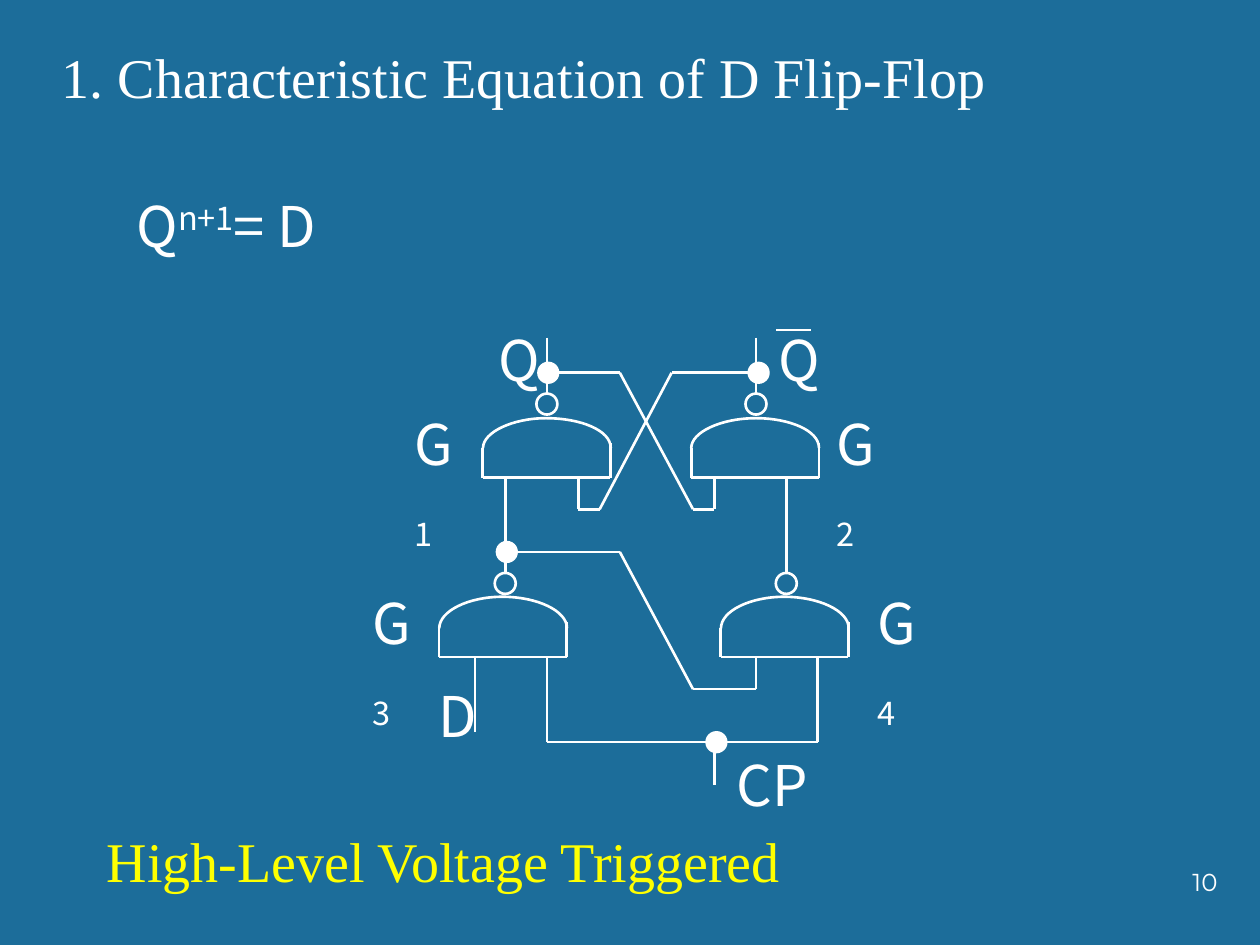
from itertools import pairwise
from lxml import etree
from pptx import Presentation
from pptx import util as u
from pptx.dml import color
from pptx.enum import shapes, text
from pptx.oxml import ns

Pt = u.Pt
COLORS = {"background": "1C6D9A", "ink": "FFFFFF", "accent": "FFFF00"}
RGB = {name: color.RGBColor.from_string(value) for name, value in COLORS.items()}
SANS, SERIF = "Noto Sans CJK SC", "Times New Roman"

deck = Presentation()
deck.slide_width, deck.slide_height = Pt(720), Pt(540)
slide = deck.slides.add_slide(deck.slide_layouts[6])
slide.background.fill.solid()
slide.background.fill.fore_color.rgb = RGB["background"]


def write(words, left, top, width, height=46, *, font=SANS, size=32, ink="ink",
          align=text.PP_ALIGN.LEFT):
    """Add a label; each entry of words is (string, baseline shift in percent)."""
    box = slide.shapes.add_textbox(Pt(left), Pt(top), Pt(width), Pt(height))
    box.text_frame.word_wrap = True
    line = box.text_frame.paragraphs[0]
    line.alignment = align
    for string, shift in words:
        run = line.add_run()
        run.text = string
        run.font.size, run.font.name = Pt(size), font
        run.font.color.rgb = RGB[ink]
        properties = run.font._element
        if shift:
            properties.set("baseline", str(shift * 1000))
        etree.SubElement(properties, ns.qn("a:ea")).set("typeface", font)


def wire(*points):
    """Join the points with straight segments."""
    for (x1, y1), (x2, y2) in pairwise(points):
        segment = slide.shapes.add_connector(
            shapes.MSO_CONNECTOR.STRAIGHT, Pt(x1), Pt(y1), Pt(x2), Pt(y2))
        segment.line.color.rgb = RGB["ink"]
        segment.line.width = Pt(1.5)
        etree.SubElement(segment._element.spPr, ns.qn("a:effectLst"))


# Heading, equation and closing remark
write([(" 1. Characteristic Equation of D Flip-Flop", 0)], 20.2, 20.9, 683.3, font=SERIF)
write([("Q", 0), ("n+1", 30), ("= D", 0)], 70.9, 105.8, 386)
write([("High-Level Voltage Triggered", 0)], 54, 468.7, 430.6, font=SERIF, ink="accent")

# Levels and columns of the circuit
output_y, cross_y, upper_base, feedback_y = 193, 213, 273, 291
branch_y, lower_base, input_y, clock_y = 315.4, 375.5, 393.8, 424.1
q_x, q_bar_x, set_x, reset_x = 312.5, 432, 288.7, 449.3

# Wires: outputs, upper gate inputs, cross coupling, inner links, lower inputs
for x in (q_x, q_bar_x):
    wire((x, output_y), (x, 224.6))
for x in (set_x, 330.5, 408.2, reset_x):
    wire((x, upper_base), (x, feedback_y))
wire((q_x, cross_y), (354.2, cross_y), (396, feedback_y), (408.2, feedback_y))
wire((q_bar_x, cross_y), (383.8, cross_y), (342.7, feedback_y), (330.5, feedback_y))
for x in (set_x, reset_x):
    wire((x, 285), (x, 327.6))
wire((set_x, branch_y), (354.2, branch_y), (396, input_y),
     (q_bar_x, input_y), (q_bar_x, lower_base))
wire((q_x, lower_base), (q_x, clock_y), (467.3, clock_y), (467.3, lower_base))
wire((408.2, clock_y), (408.2, 448.6))
wire((271.4, lower_base), (271.4, 418.3))

# NAND gates: dome of two curves, sides, base and inverting ring
gate_width, dome_height, side_height = 73, 17.3, 16.8
dome = [(0, 0), (0, 0.54), (0.23, 1), (0.5, 1), (0.77, 1), (1, 0.58), (1, 0)]
for left, base, ring_x in ((275.8, upper_base, q_x), (395.1, upper_base, q_bar_x),
                           (250.8, lower_base, set_x), (411.8, lower_base, reset_x)):
    right, spring = left + gate_width, base - side_height
    controls = [(left + gate_width * x, spring - dome_height * y) for x, y in dome]
    outline = slide.shapes.build_freeform(*controls[0], scale=Pt(1))
    outline.add_line_segments(controls[1:], close=False)
    arch = outline.convert_to_shape()
    geometry = arch._element.find(".//" + ns.qn("a:path"))
    steps = geometry.findall(ns.qn("a:lnTo"))
    for triple in (steps[:3], steps[3:]):
        curve = etree.SubElement(geometry, ns.qn("a:cubicBezTo"))
        for step in triple:
            curve.append(step[0])
            geometry.remove(step)
    ring = slide.shapes.add_shape(shapes.MSO_SHAPE.OVAL, Pt(ring_x - 6),
                                  Pt(base - 48.1), Pt(12), Pt(12))
    for part in (arch, ring):
        part.shadow.inherit = False
        part.fill.background()
        part.line.color.rgb = RGB["ink"]
        part.line.width = Pt(1.5)
    wire((left, spring), (left, base))
    wire((right, spring - 3), (right, base))
    wire((left, base), (right, base))

# Junction dots
for x, y in ((289.6, branch_y), (313.3, cross_y), (433.5, cross_y), (409.4, clock_y)):
    dot = slide.shapes.add_shape(shapes.MSO_SHAPE.OVAL, Pt(x - 6), Pt(y - 6), Pt(12), Pt(12))
    dot.shadow.inherit = False
    dot.fill.solid()
    dot.fill.fore_color.rgb = dot.line.color.rgb = RGB["ink"]
    dot.line.width = Pt(0.75)

# Signal names, with the bar over the inverted output
for name, left, top, width in (("Q", 277.9, 182.2, 30.2), ("Q", 437.8, 182.2, 30.2),
                               ("D", 243.4, 385.9, 30.2), ("CP", 414, 425.5, 65.5)):
    write([(name, 0)], left, top, width)
wire((443.5, 188.6), (463.7, 188.6))

# Gate names; the narrow boxes put each index below its letter
for index, left, top in (("1", 229.7, 230.4), ("2", 470.9, 230.4),
                         ("3", 205.9, 332.6), ("4", 494.6, 332.6)):
    write([("G", 0), (index, -25)], left, top, 41)

# Page number
write([("10", 0)], 553, 491.8, 149.8, 36, font="Montserrat", size=14,
      align=text.PP_ALIGN.RIGHT)

deck.save("out.pptx")
